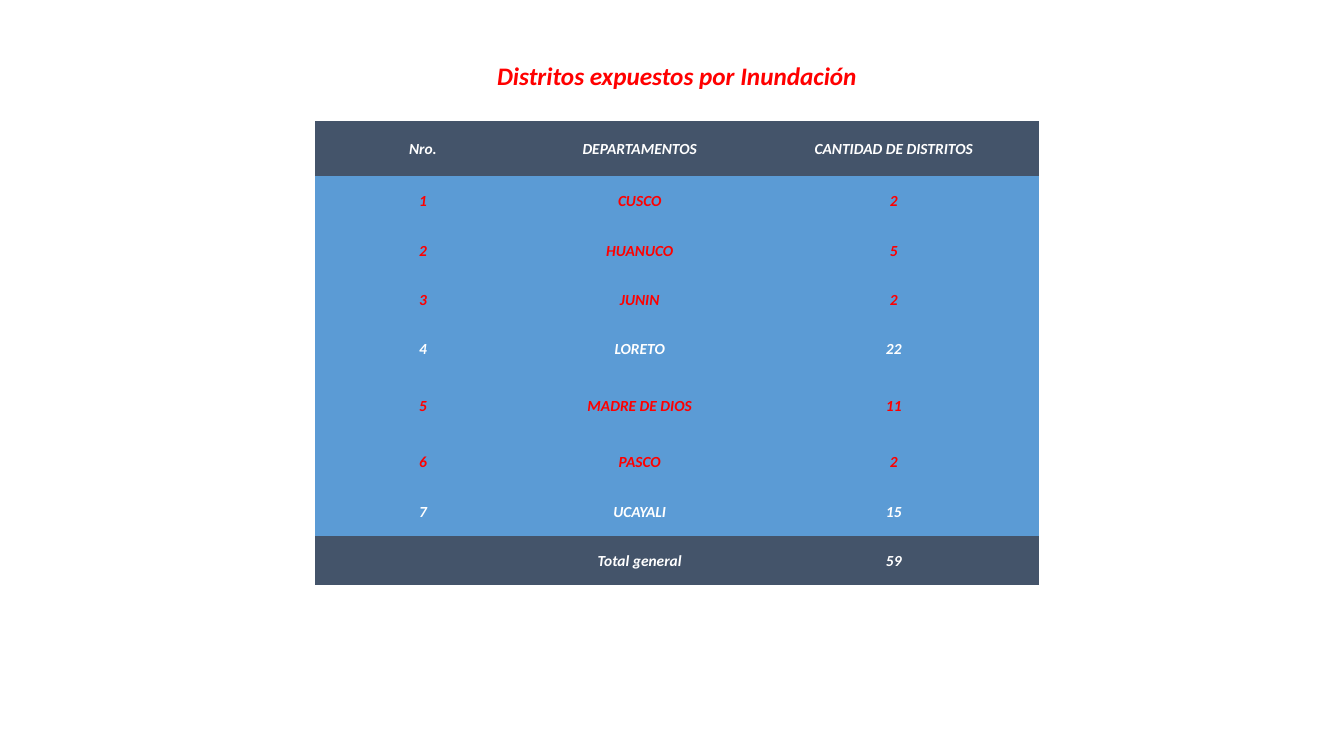
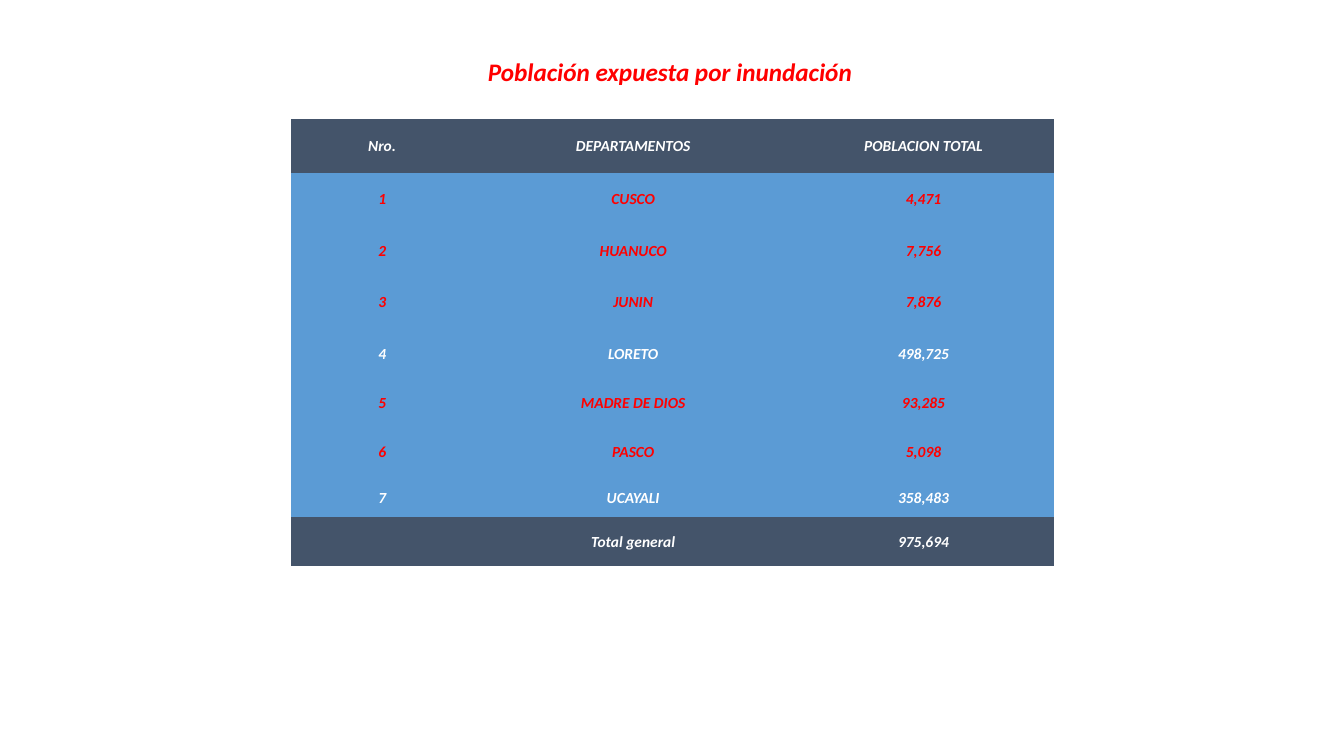
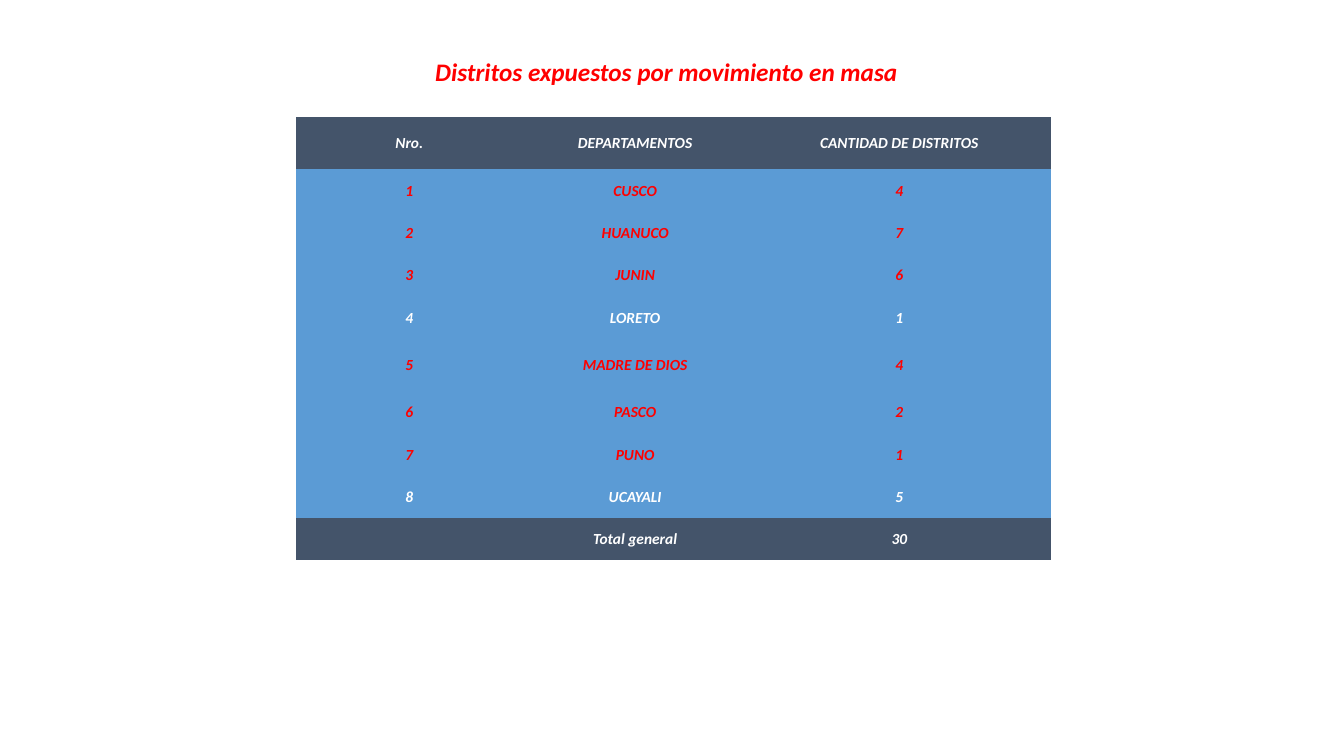
from pptx import Presentation
from pptx.dml.color import RGBColor
from pptx.enum.text import MSO_ANCHOR, MSO_AUTO_SIZE, PP_ALIGN
from pptx.oxml.ns import qn
from pptx.util import Emu, Pt

PX = 9144
FONT = "Calibri"
COLORS = {"red": "FF0000", "white": "FFFFFF", "slate": "44546A", "blue": "5B9BD5"}
NO_GRID_STYLE = "{2D5ABB26-0587-4C30-8999-92F81FD0307C}"
WHITE_DEPARTMENTS = {"LORETO", "UCAYALI"}
DISTRICTS = "CANTIDAD DE DISTRITOS"

SLIDES = [
    {
        "title": "Distritos expuestos por Inundación",
        "title_box": (481, 55, 381, 40),
        "origin": (312, 120),
        "cols": [215, 215, 289],
        "rows": [55, 49, 49, 49, 49, 63, 49, 49, 49],
        "measure": DISTRICTS,
        "values": {"CUSCO": 2, "HUANUCO": 5, "JUNIN": 2, "LORETO": 22,
                   "MADRE DE DIOS": 11, "PASCO": 2, "UCAYALI": 15},
    },
    {
        "title": "Población expuesta por inundación",
        "title_box": (472, 51, 385, 40),
        "origin": (289, 118),
        "cols": [180, 318, 258],
        "rows": [54, 51, 51, 51, 51, 47, 51, 39, 49],
        "measure": "POBLACION TOTAL",
        "values": {"CUSCO": 4471, "HUANUCO": 7756, "JUNIN": 7876, "LORETO": 498725,
                   "MADRE DE DIOS": 93285, "PASCO": 5098, "UCAYALI": 358483},
    },
    {
        "title": "Distritos expuestos por movimiento en masa",
        "title_box": (416, 51, 490, 40),
        "origin": (294, 116),
        "cols": [224, 224, 300],
        "rows": [52, 42, 42, 42, 42, 52, 42, 42, 42, 42],
        "measure": DISTRICTS,
        "values": {"CUSCO": 4, "HUANUCO": 7, "JUNIN": 6, "LORETO": 1,
                   "MADRE DE DIOS": 4, "PASCO": 2, "PUNO": 1, "UCAYALI": 5},
    },
]


def px(n):
    return Emu(n * PX)


def rgb(name):
    return RGBColor.from_string(COLORS[name])


def format_text(tf, size, color):
    p = tf.paragraphs[0]
    p.alignment = PP_ALIGN.CENTER
    for r in p.runs:
        r.font.name = FONT
        r.font.size = Pt(size)
        r.font.bold = r.font.italic = True
        r.font.color.rgb = rgb(color)


def add_title(slide, text, box):
    sp = slide.shapes.title
    sp.left, sp.top, sp.width, sp.height = map(px, box)
    tf = sp.text_frame
    tf.text = text
    tf.word_wrap = False
    tf.auto_size = MSO_AUTO_SIZE.SHAPE_TO_FIT_TEXT
    tf.vertical_anchor = MSO_ANCHOR.TOP
    format_text(tf, 18, "red")


def fill_cell(cell, text, fill, color):
    cell.fill.solid()
    cell.fill.fore_color.rgb = rgb(fill)
    cell.vertical_anchor = MSO_ANCHOR.MIDDLE
    cell.margin_left = cell.margin_right = cell.margin_top = px(1)
    cell.margin_bottom = 0
    cell.text = text
    format_text(cell.text_frame, 11, color)


def table_rows(measure, values):
    yield ("Nro.", "DEPARTAMENTOS", measure), "slate", "white"
    for number, (department, value) in enumerate(values.items(), 1):
        color = "white" if department in WHITE_DEPARTMENTS else "red"
        yield (str(number), department, f"{value:,}"), "blue", color
    yield ("", "Total general", f"{sum(values.values()):,}"), "slate", "white"


def add_department_table(slide, origin, cols, rows, measure, values):
    frame = slide.shapes.add_table(
        len(rows), len(cols), *map(px, (*origin, sum(cols), sum(rows))))
    table = frame.table
    table.first_row = table.horz_banding = False
    frame.element.find(".//" + qn("a:tableStyleId")).text = NO_GRID_STYLE
    for column, width in zip(table.columns, cols):
        column.width = px(width)
    for row, height, (texts, fill, color) in zip(
            table.rows, rows, table_rows(measure, values)):
        row.height = px(height)
        for cell, text in zip(row.cells, texts):
            fill_cell(cell, text, fill, color)


def main():
    prs = Presentation()
    prs.slide_width, prs.slide_height = px(1333), px(750)
    title_only = prs.slide_layouts[5]
    for data in SLIDES:
        slide = prs.slides.add_slide(title_only)
        add_title(slide, data["title"], data["title_box"])
        add_department_table(slide, data["origin"], data["cols"], data["rows"],
                             data["measure"], data["values"])
    prs.save("out.pptx")


if __name__ == "__main__":
    main()
